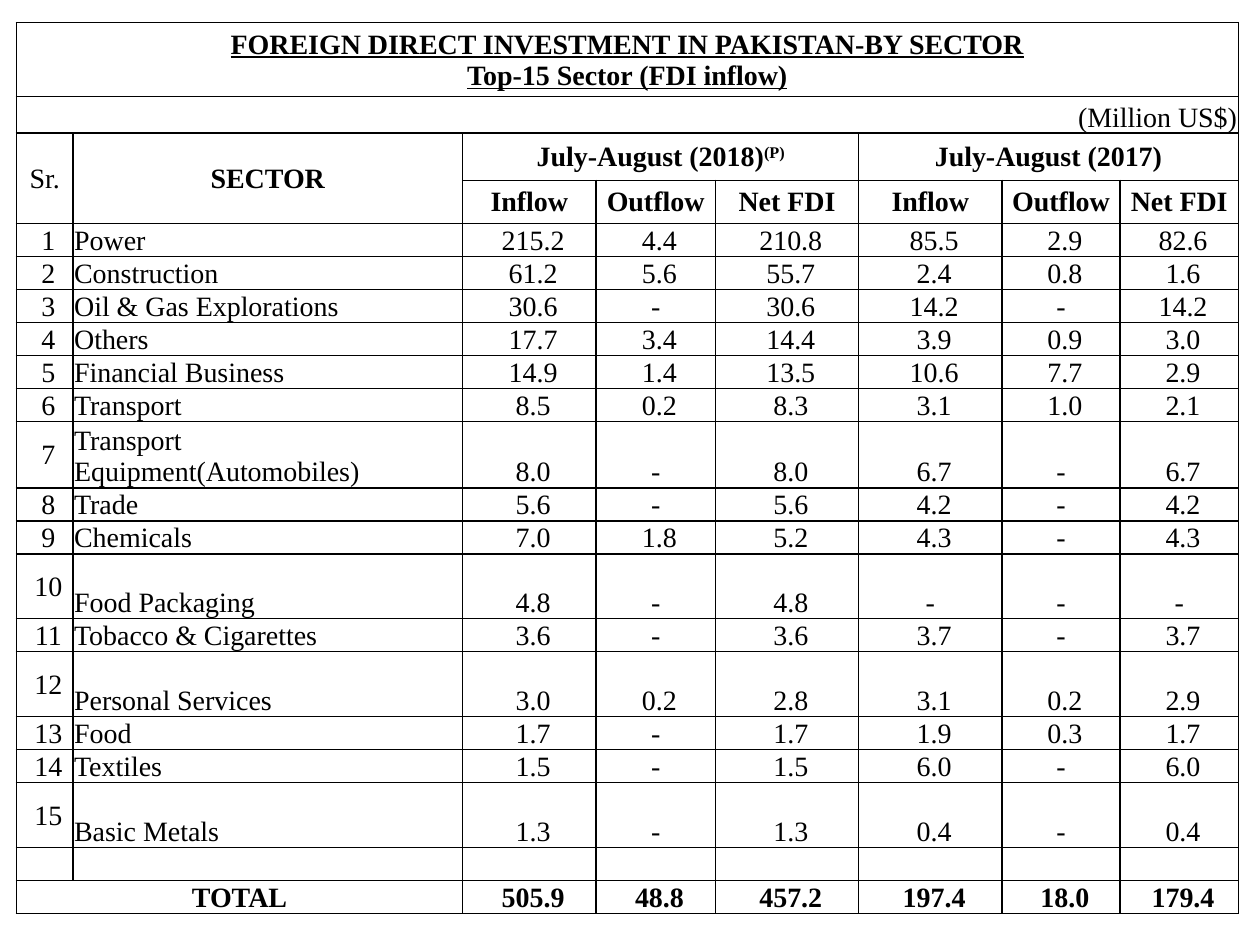
from dataclasses import dataclass
from typing import NamedTuple

from lxml.etree import SubElement
from pptx import Presentation
from pptx.dml.color import RGBColor as RGB
from pptx.enum.text import MSO_ANCHOR as Anchor, PP_ALIGN as Align
from pptx.oxml.ns import qn
from pptx.table import Table, _Cell as Cell
from pptx.util import Inches, Pt


@dataclass(frozen=True)
class Theme:
    font: str = "Times New Roman"
    size: int = 16
    ink: str = "000000"
    border: float = 1
    inset: float = 0.01
    value_indent: float = 0.06


@dataclass(frozen=True)
class Style:
    bold: bool = False
    underline: bool = False
    align: Align = Align.CENTER
    anchor: Anchor = Anchor.MIDDLE


class Heading(NamedTuple):
    row: int
    column: int
    text: str
    style: Style
    row_span: int = 1
    column_span: int = 1


class Sector(NamedTuple):
    name: str
    flows: str
    height: float = 0.26


THEME = Theme()
SLIDE_W, SLIDE_H = Inches(10), Inches(7.5)
LEFT, TOP, WIDTH, HEIGHT = 0.013, 0.024, 0.97, 0.943

BOLD = Style(bold=True)
TITLE = Style(bold=True, underline=True)
UNIT = Style(align=Align.RIGHT, anchor=Anchor.BOTTOM)
NUMBER = Style()
NAME = Style(align=Align.LEFT, anchor=Anchor.BOTTOM)
VALUE = Style(anchor=Anchor.BOTTOM)
TOTAL = Style(bold=True, anchor=Anchor.BOTTOM)

SECTORS = [
    Sector("Power", "215.2 4.4 210.8 85.5 2.9 82.6"),
    Sector("Construction", "61.2 5.6 55.7 2.4 0.8 1.6"),
    Sector("Oil & Gas Explorations", "30.6 - 30.6 14.2 - 14.2"),
    Sector("Others", "17.7 3.4 14.4 3.9 0.9 3.0"),
    Sector("Financial Business", "14.9 1.4 13.5 10.6 7.7 2.9"),
    Sector("Transport", "8.5 0.2 8.3 3.1 1.0 2.1"),
    Sector("Transport Equipment(Automobiles)", "8.0 - 8.0 6.7 - 6.7", 0.52),
    Sector("Trade", "5.6 - 5.6 4.2 - 4.2"),
    Sector("Chemicals", "7.0 1.8 5.2 4.3 - 4.3"),
    Sector("Food Packaging", "4.8 - 4.8 - - -", 0.51),
    Sector("Tobacco & Cigarettes", "3.6 - 3.6 3.7 - 3.7"),
    Sector("Personal Services", "3.0 0.2 2.8 3.1 0.2 2.9", 0.51),
    Sector("Food", "1.7 - 1.7 1.9 0.3 1.7"),
    Sector("Textiles", "1.5 - 1.5 6.0 - 6.0"),
    Sector("Basic Metals", "1.3 - 1.3 0.4 - 0.4", 0.51),
]
TOTAL_FLOWS = "505.9 48.8 457.2 197.4 18.0 179.4"
COLUMN_SHARES = [0.45, 3.1, 1.06, 0.95, 1.14, 1.14, 0.94, 0.94]
HEADER_SHARES = [0.58, 0.29, 0.37, 0.34]
ROW_SHARES = HEADER_SHARES + [sector.height for sector in SECTORS] + [0.26, 0.26]
FIRST_SECTOR, FIRST_FLOW = len(HEADER_SHARES), 2
TOTAL_ROW = len(ROW_SHARES) - 1

HEADINGS = [
    Heading(0, 0, "FOREIGN DIRECT INVESTMENT IN PAKISTAN-BY SECTOR\nTop-15 Sector (FDI inflow)",
            TITLE, column_span=8),
    Heading(1, 0, "(Million US$)", UNIT, column_span=8),
    Heading(2, 0, "Sr.", NUMBER, row_span=2),
    Heading(2, 1, "SECTOR", BOLD, row_span=2),
    Heading(2, 2, "July-August (2018)", BOLD, column_span=3),
    Heading(2, 5, "July-August (2017)", BOLD, column_span=3),
    *(Heading(3, FIRST_FLOW + i, flow, BOLD)
      for i, flow in enumerate(["Inflow", "Outflow", "Net FDI"] * 2)),
    Heading(TOTAL_ROW, 0, "TOTAL", TOTAL, column_span=2),
]


def draw_borders(cell: Cell) -> None:
    """Rule all four sides of a cell."""
    properties = cell._tc.get_or_add_tcPr()
    for position, side in enumerate(("lnL", "lnR", "lnT", "lnB")):
        line = SubElement(properties, qn(f"a:{side}"), w=str(Pt(THEME.border)))
        fill = SubElement(line, qn("a:solidFill"))
        SubElement(fill, qn("a:srgbClr"), val=THEME.ink)
        properties.insert(position, line)


def write(cell: Cell, text: str, style: Style) -> None:
    """Fill a cell with text in the given style."""
    cell.text = text
    cell.vertical_anchor = style.anchor
    for paragraph in cell.text_frame.paragraphs:
        paragraph.alignment = style.align
        font = paragraph.font
        font.name, font.size = THEME.font, Pt(THEME.size)
        font.bold, font.underline = style.bold, style.underline
        font.color.rgb = RGB.from_string(THEME.ink)


def write_value(cell: Cell, text: str, style: Style) -> None:
    """Write a number set slightly right of centre, or a centred dash."""
    write(cell, text, style)
    if text != "-":
        cell.margin_left = Inches(THEME.inset + THEME.value_indent)


def write_flows(table: Table, row: int, flows: str, style: Style) -> None:
    """Write the six flow values of one row."""
    for column, flow in enumerate(flows.split(), FIRST_FLOW):
        write_value(table.cell(row, column), flow, style)


def add_grid(slide) -> Table:
    """Add the ruled, unfilled table."""
    table = slide.shapes.add_table(
        len(ROW_SHARES), len(COLUMN_SHARES), int(LEFT * SLIDE_W), int(TOP * SLIDE_H),
        int(WIDTH * SLIDE_W), int(HEIGHT * SLIDE_H)).table
    table.first_row = table.horz_banding = False
    for column, share in zip(table.columns, COLUMN_SHARES):
        column.width = int(WIDTH * SLIDE_W * share / sum(COLUMN_SHARES))
    for row, share in zip(table.rows, ROW_SHARES):
        row.height = int(HEIGHT * SLIDE_H * share / sum(ROW_SHARES))
    for cell in table.iter_cells():
        cell.margin_left = cell.margin_right = cell.margin_top = Inches(THEME.inset)
        cell.margin_bottom = 0
        cell.fill.background()
        draw_borders(cell)
        write(cell, "", VALUE)
    return table


def main() -> None:
    """Build the slide and save it."""
    deck = Presentation()
    deck.slide_width, deck.slide_height = SLIDE_W, SLIDE_H
    table = add_grid(deck.slides.add_slide(deck.slide_layouts[6]))

    for heading in HEADINGS:
        cell = table.cell(heading.row, heading.column)
        if heading.row_span * heading.column_span > 1:
            cell.merge(table.cell(heading.row + heading.row_span - 1,
                                  heading.column + heading.column_span - 1))
        write(cell, heading.text, heading.style)
    provisional = table.cell(2, FIRST_FLOW).text_frame.paragraphs[0].add_run()
    provisional.text = "(P)"
    provisional._r.get_or_add_rPr().set("baseline", "30000")

    for number, sector in enumerate(SECTORS, 1):
        row = FIRST_SECTOR + number - 1
        write_value(table.cell(row, 0), str(number), NUMBER)
        write(table.cell(row, 1), sector.name, NAME)
        write_flows(table, row, sector.flows, VALUE)
    write_flows(table, TOTAL_ROW, TOTAL_FLOWS, TOTAL)
    deck.save("out.pptx")


if __name__ == "__main__":
    main()
